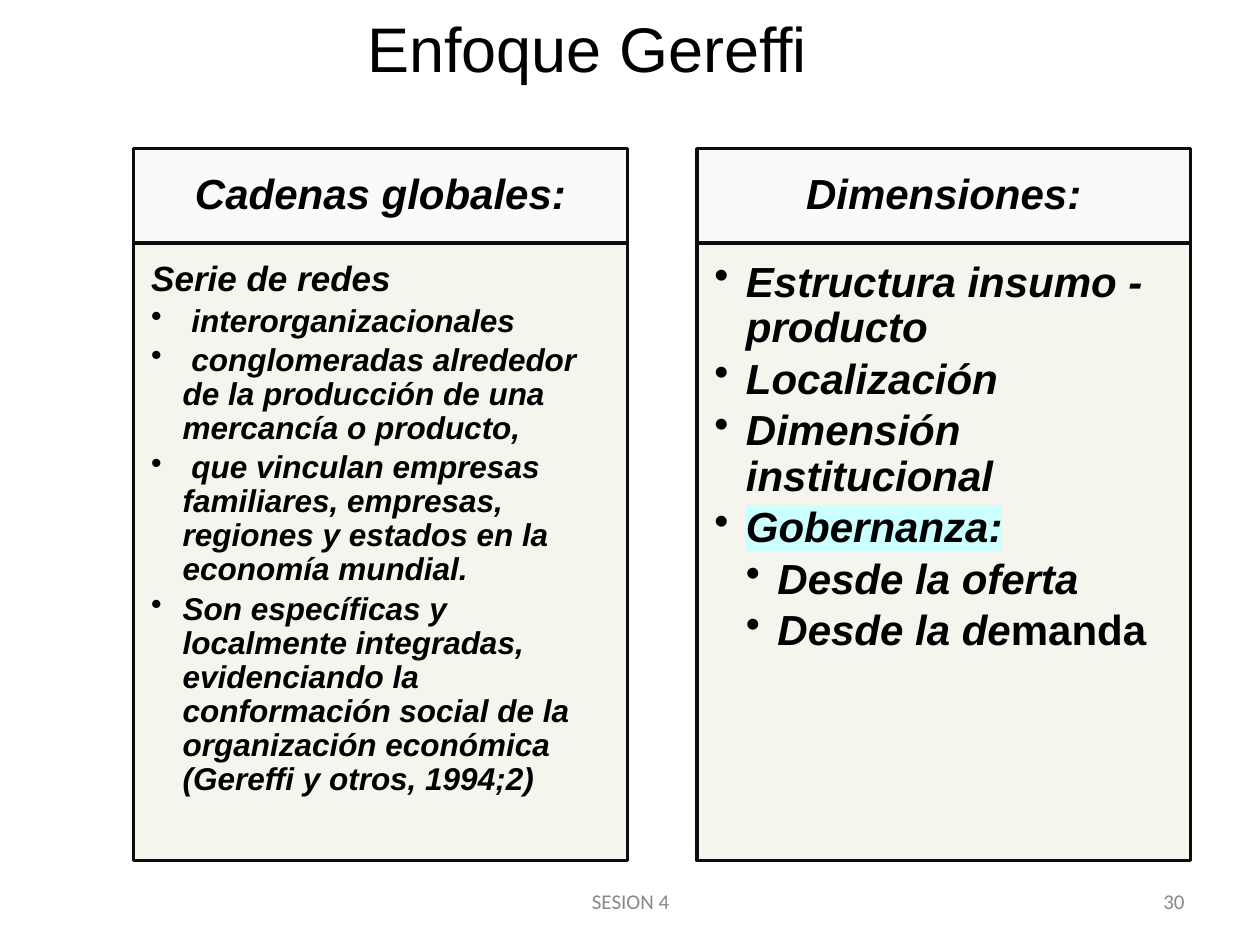
from lxml import etree
from pptx import Presentation
from pptx import util as u
from pptx.dml.color import RGBColor
from pptx.enum import shapes, text
from pptx.oxml.ns import qn

PX = 9144  # EMU in one px, 100 px to the inch
INK = "000000"
LEFT, MID, RIGHT = text.PP_ALIGN.LEFT, text.PP_ALIGN.CENTER, text.PP_ALIGN.RIGHT


def hue(code):
    return RGBColor.from_string(code)


def node(name, val=None, tint=None):
    """Make a DrawingML element, with an optional value or colour inside."""
    item = etree.Element(qn(name))
    if val is not None:
        item.set("val", str(val))
    if tint:
        etree.SubElement(item, qn("a:srgbClr"), val=tint)
    return item


class Deck:
    edge, head, body, mark = "0C0C0C", "FBFAF8", "F4F3EC", "CCFFFF"
    step = 25  # indent of one list level

    def __init__(self, wide, high):
        self.prs = Presentation()
        self.prs.slide_width, self.prs.slide_height = wide * PX, high * PX
        self.slide = self.prs.slides.add_slide(self.prs.slide_layouts[6])

    def frame(self, shape, pads, anchor):
        tf = shape.text_frame
        tf.word_wrap = True
        tf.vertical_anchor = anchor
        (tf.margin_left, tf.margin_top,
         tf.margin_right, tf.margin_bottom) = [p * PX for p in pads]
        return tf

    def font(self, run, size, name="Arial", color=INK, bold=False, slant=False):
        f = run.font
        f.size, f.name, f.bold, f.italic = u.Pt(size), name, bold, slant
        f.color.rgb = hue(color)

    def label(self, words, box, size, name="Arial", color=INK, align=MID):
        shape = self.slide.shapes.add_textbox(*[v * PX for v in box])
        tf = self.frame(shape, (10, 5, 10, 5), text.MSO_ANCHOR.MIDDLE)
        tf.text = words
        para = tf.paragraphs[0]
        para.alignment = align
        self.font(para.runs[0], size, name, color)

    def rect(self, box, fill, alpha=None):
        shape = self.slide.shapes.add_shape(
            shapes.MSO_SHAPE.RECTANGLE, *[v * PX for v in box])
        shape.shadow.inherit = False
        shape.fill.solid()
        shape.fill.fore_color.rgb = hue(fill)
        if alpha:
            tint = shape._element.spPr.find(qn("a:solidFill"))[0]
            tint.append(node("a:alpha", alpha * 1000))
        shape.line.color.rgb = hue(self.edge)
        shape.line.width = u.Pt(2)
        return shape

    def item(self, para, words, size, gap, level=1, dot=True, lit=False, plain=""):
        """Fill a list entry; lit highlights it, plain is an upright ending."""
        para.text = words
        para.level, para.alignment = level, LEFT
        para.line_spacing, para.space_before = 0.9, u.Pt(gap)
        if plain:
            para.add_run().text = plain
        for n, run in enumerate(para.runs):
            self.font(run, size, bold=True, slant=n == 0)
            if lit:
                fill = run._r.rPr.find(qn("a:solidFill"))
                fill.addnext(node("a:highlight", tint=self.mark))
        props = para._p.get_or_add_pPr()
        props.set("marL", str(level * self.step * PX))
        props.set("indent", str(-self.step * PX))
        if dot:
            props.append(node("a:buClr", tint=INK))
            etree.SubElement(props, qn("a:buChar"), char="•")

    def panel(self, x, title, items):
        top, wide, cap, tall = 118, 392, 75, 490
        bar = self.rect((x, top, wide, cap), self.head)
        tf = self.frame(bar, (19, 11, 19, 11), text.MSO_ANCHOR.MIDDLE)
        tf.text = title
        para = tf.paragraphs[0]
        para.alignment, para.line_spacing = MID, 0.9
        self.font(para.runs[0], 24, bold=True, slant=True)

        block = self.rect((x, top + cap, wide, tall), self.body, alpha=90)
        tf = self.frame(block, (14, 14, 19, 21), text.MSO_ANCHOR.TOP)
        for n, entry in enumerate(items):
            para = tf.add_paragraph() if n else tf.paragraphs[0]
            self.item(para, **entry)


def main():
    deck = Deck(1000, 750)
    deck.label("Enfoque Gereffi", (70, 0, 792, 75), 36)

    small = dict(size=18, gap=3)
    deck.panel(106, "Cadenas globales:", [
        dict(words="Serie de redes", size=20, gap=0, dot=False),
        dict(words=" interorganizacionales", size=18, gap=3.6),
        dict(small, words=" conglomeradas alrededor de la producción de una "
                          "mercancía o producto,"),
        dict(small, words=" que vinculan empresas familiares, empresas, "
                          "regiones y estados en la economía mundial."),
        dict(small, words="Son específicas y localmente integradas, evidenciando "
                          "la conformación social de la organización económica "
                          "(Gereffi y otros, 1994;2)"),
    ])

    large = dict(size=24, gap=3.6)
    deck.panel(553, "Dimensiones:", [
        dict(words="Estructura insumo - producto", size=24, gap=0),
        dict(large, words="Localización"),
        dict(large, words="Dimensión institucional"),
        dict(large, words="Gobernanza:", lit=True),
        dict(large, words="Desde la oferta", level=2),
        dict(large, words="Desde la de", level=2, plain="manda"),
    ])

    deck.label("30", (717, 695, 233, 40), 12, "Calibri", "898989", RIGHT)
    deck.label("SESION 4", (342, 695, 317, 40), 12, "Calibri", "888888")
    deck.prs.save("out.pptx")


if __name__ == "__main__":
    main()
